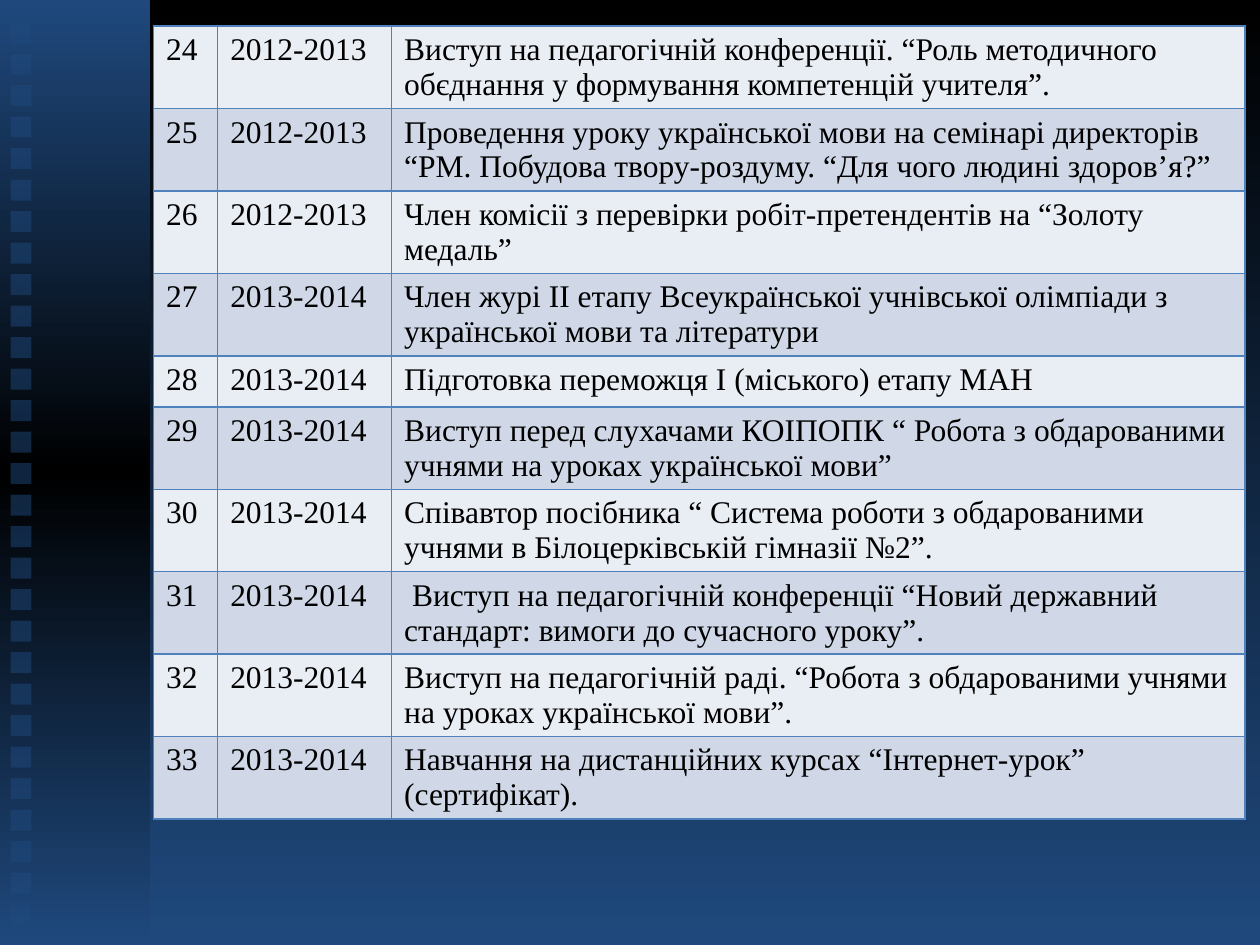
"""Build a slide with a numbered table of a teacher's activities, rows 24 to 33."""
from copy import deepcopy

from lxml import etree
from pptx import Presentation, dml, util as u
from pptx.dml import color
from pptx.enum import shapes
from pptx.oxml import ns

COLOURS = {
    "navy": "1F497D",
    "black": "000000",
    "border": "4F81BD",
    "light": "E9EDF4",
    "dark": "D0D8E8",
}
RGB = {name: color.RGBColor.from_string(value) for name, value in COLOURS.items()}
TEXT_FORMAT = {"size": u.Pt(18), "name": "Times New Roman"}
COLUMN_WIDTHS = [36.6, 99.4, 487.8]
ROW_HEIGHT = 29.2
FIRST_NUMBER = 24
ACTIVITIES = [
    ("2012-2013", "Виступ на педагогічній конференції. “Роль методичного обєднання у формування компетенцій учителя”."),
    ("2012-2013", "Проведення уроку української мови на семінарі директорів\n“РМ. Побудова твору-роздуму. “Для чого людині здоров’я?”"),
    ("2012-2013", "Член комісії з перевірки робіт-претендентів на “Золоту медаль”"),
    ("2013-2014", "Член журі ІІ етапу Всеукраїнської учнівської олімпіади з української мови та літератури"),
    ("2013-2014", "Підготовка переможця І (міського) етапу МАН"),
    ("2013-2014", "Виступ перед слухачами КОІПОПК “ Робота з обдарованими учнями на уроках української мови”"),
    ("2013-2014", "Співавтор посібника “ Система роботи з обдарованими учнями в Білоцерківській гімназії №2”."),
    ("2013-2014", " Виступ на педагогічній конференції “Новий державний стандарт: вимоги до сучасного уроку”."),
    ("2013-2014", "Виступ на педагогічній раді. “Робота з обдарованими учнями на уроках української мови”."),
    ("2013-2014", "Навчання на дистанційних курсах “Інтернет-урок”\n(сертифікат)."),
]


def paint_gradient(fill, element, names):
    fill.gradient()
    fill.gradient_angle = 270
    stop_list = element.find(".//" + ns.qn("a:gsLst"))
    for _ in names[2:]:
        stop_list.append(deepcopy(stop_list[-1]))
    for index, (stop, name) in enumerate(zip(fill.gradient_stops, names)):
        stop.color.rgb = RGB[name]
        stop.position = index / (len(names) - 1)


def add_rectangle(group, left, top, width, height):
    shape = group.shapes.add_shape(
        shapes.MSO_SHAPE.RECTANGLE, u.Pt(left), u.Pt(top), u.Pt(width), u.Pt(height)
    )
    shape.shadow.inherit = False
    shape.line.fill.background()
    return shape


presentation = Presentation()
presentation.slide_width, presentation.slide_height = u.Pt(720), u.Pt(540)
slide = presentation.slides.add_slide(presentation.slide_layouts[6])
paint_gradient(slide.background.fill, slide.element, ["black", "navy"])

side_group = slide.shapes.add_group_shape()
band = add_rectangle(side_group, 0, 0, 85.7, 540)
paint_gradient(band.fill, band.element, ["navy", "black", "navy"])
for index in range(29):
    square = add_rectangle(side_group, 6, 12.6 + 18 * index, 12, 12)
    square.fill.solid()
    square.fill.fore_color.rgb = RGB["navy"]
    square_colour = square.element.spPr.find(".//" + ns.qn("a:srgbClr"))
    etree.SubElement(square_colour, ns.qn("a:alpha"), val="50000")

table = slide.shapes.add_table(
    len(ACTIVITIES), len(COLUMN_WIDTHS), u.Pt(87.8), u.Pt(15),
    u.Pt(sum(COLUMN_WIDTHS)), u.Pt(ROW_HEIGHT * len(ACTIVITIES)),
).table
table.first_row = table.horz_banding = False
for column, width in zip(table.columns, COLUMN_WIDTHS):
    column.width = u.Pt(width)

for row_index, (years, activity) in enumerate(ACTIVITIES):
    table.rows[row_index].height = u.Pt(ROW_HEIGHT)
    values = [str(FIRST_NUMBER + row_index), years, activity]
    for cell, value in zip(table.rows[row_index].cells, values):
        cell.text = value
        for paragraph in cell.text_frame.paragraphs:
            for run in paragraph.runs:
                for attribute, setting in TEXT_FORMAT.items():
                    setattr(run.font, attribute, setting)
                run.font.color.rgb = RGB["black"]
        properties = cell._tc.get_or_add_tcPr()
        for side in ("lnL", "lnR", "lnT", "lnB"):
            border = etree.SubElement(properties, ns.qn("a:" + side), w=str(u.Pt(1)))
            border_fill = etree.SubElement(border, ns.qn("a:solidFill"))
            etree.SubElement(border_fill, ns.qn("a:srgbClr"), val=COLOURS["border"])
        cell.fill.solid()
        cell.fill.fore_color.rgb = RGB["dark" if row_index % 2 else "light"]

presentation.save("out.pptx")
